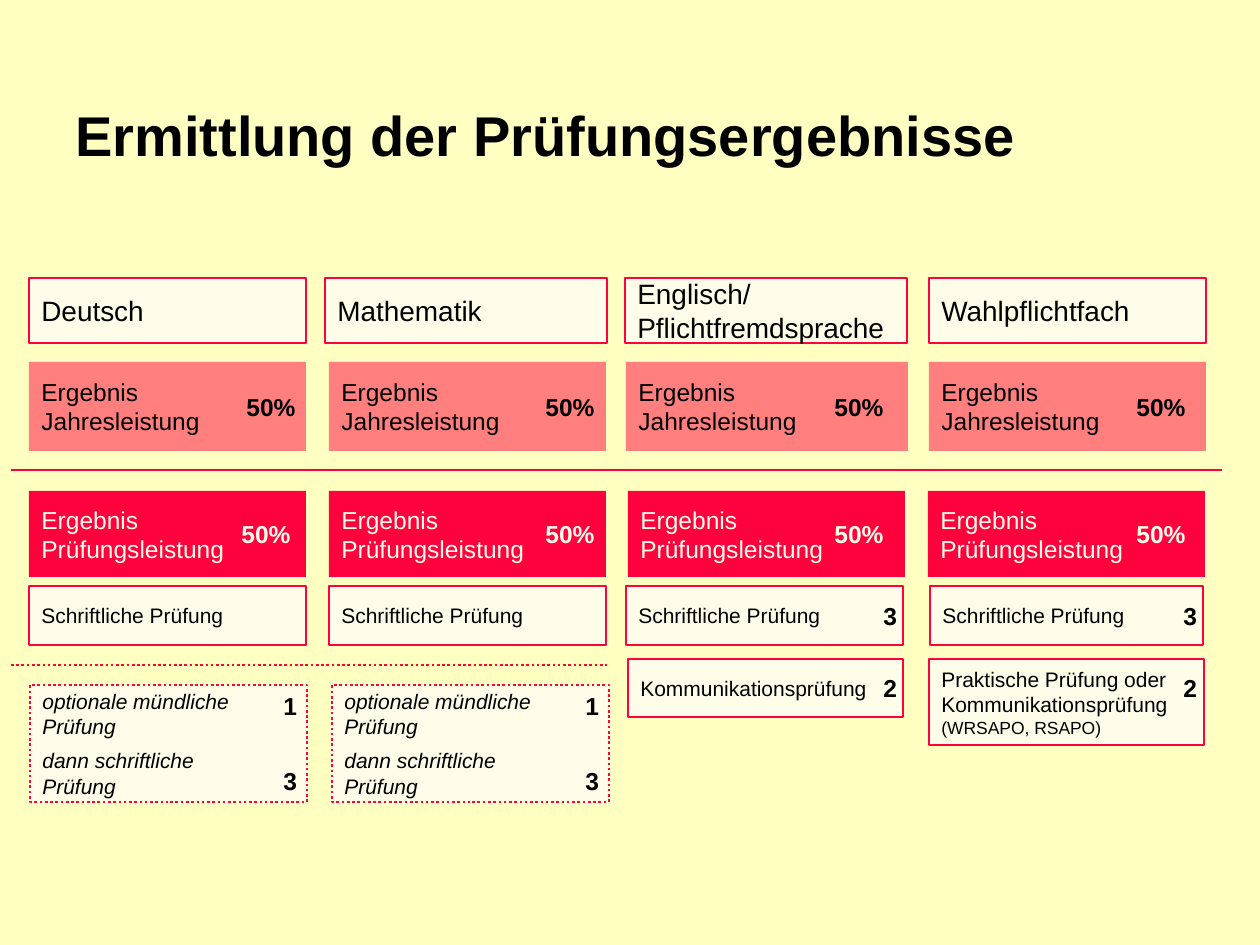
from lxml import etree
from pptx import Presentation
from pptx.dml.color import RGBColor
from pptx.enum.dml import MSO_LINE
from pptx.enum.shapes import MSO_CONNECTOR, MSO_SHAPE
from pptx.enum.text import MSO_ANCHOR, MSO_AUTO_SIZE, PP_ALIGN
from pptx.oxml.ns import qn
from pptx.util import Emu, Pt

RECT = MSO_SHAPE.RECTANGLE
LINE = MSO_CONNECTOR.STRAIGHT
DOTS = MSO_LINE.ROUND_DOT
MID, TOP = MSO_ANCHOR.MIDDLE, MSO_ANCHOR.TOP
GROW = MSO_AUTO_SIZE.SHAPE_TO_FIT_TEXT
LEFT = PP_ALIGN.LEFT
COLORS = {"page": "FFFFC1", "cream": "FFFDE9", "red": "FE023E",
          "rose": "FF7F7F", "black": "000000"}


def px(n):
    return Emu(round(n * 914400 / 126))


def color(name):
    return RGBColor.from_string(COLORS[name])


def write(frame, text, size=14, ink="black", bold=False, italic=False,
          anchor=MID, gap=0, note=None):
    frame.word_wrap = True
    frame.vertical_anchor = anchor
    for i, part in enumerate(text.split("\n")):
        para = frame.paragraphs[0] if i == 0 else frame.add_paragraph()
        para.text = part
        para.alignment = LEFT
        if i:
            para.space_before = Pt(gap)
        for stop in para._p.findall(qn("a:br")):
            etree.SubElement(stop, qn("a:rPr"), sz=str(size * 100))
        if note:
            para.add_run().text = note
        for run in para.runs:
            font = run.font
            font.name, font.size = "Arial", Pt(size)
            font.bold, font.italic = bold, italic
            font.color.rgb = color(ink)
        if note:
            para.runs[-1].font.size = Pt(size - 2)


class Deck:
    def __init__(self):
        self.file = Presentation()
        self.file.slide_width = px(1260)
        self.file.slide_height = px(945)
        self.slide = self.file.slides.add_slide(self.file.slide_layouts[6])
        fill = self.slide.background.fill
        fill.solid()
        fill.fore_color.rgb = color("page")

    def stroke(self, line, dash=None):
        line.color.rgb = color("red")
        line.width = Pt(1.5)
        if dash:
            line.dash_style = dash

    def box(self, x, y, w, h, text, fill="cream", edge=True, dash=None, **style):
        shape = self.slide.shapes.add_shape(RECT, px(x), px(y), px(w), px(h))
        shape.shadow.inherit = False
        shape.fill.solid()
        shape.fill.fore_color.rgb = color(fill)
        if edge:
            self.stroke(shape.line, dash)
        else:
            shape.line.fill.background()
        write(shape.text_frame, text, **style)

    def label(self, x, y, w, h, text, **style):
        frame = self.slide.shapes.add_textbox(px(x), px(y), px(w), px(h)).text_frame
        write(frame, text, bold=True, **style)
        return frame

    def mark(self, x, y, text, w=61, ink="black"):
        self.label(x, y, w, 43, text, ink=ink, anchor=TOP).auto_size = GROW

    def rule(self, x, end, y, dash=None):
        line = self.slide.shapes.add_connector(LINE, px(x), px(y), px(end), px(y))
        self.stroke(line.line, dash)
        etree.SubElement(line._element.spPr, qn("a:effectLst"))


def main():
    deck = Deck()
    deck.label(63, 79, 1134, 110, "Ermittlung der Prüfungsergebnisse", size=32)

    heads = [(29, 277, "Deutsch"), (325, 282, "Mathematik"),
             (625, 282, "Englisch/\nPflichtfremdsprache"),
             (929, 277, "Wahlpflichtfach")]
    for x, w, text in heads:
        deck.box(x, 278, w, 65, text, size=16)

    for x, w, spot in [(29, 277, 234), (329, 277, 533), (626, 282, 822), (929, 277, 1124)]:
        deck.box(x, 362, w, 89, "Ergebnis Jahresleistung", fill="rose", edge=False)
        deck.mark(spot, 386, "50%", w=106)

    deck.rule(11, 1222, 470)

    for x, spot in [(29, 229), (329, 533), (628, 822), (928, 1124)]:
        deck.box(x, 491, 277, 86, "Ergebnis Prüfungsleistung", fill="red",
                 edge=False, ink="cream")
        deck.mark(spot, 513, "50%", w=106, ink="cream")

    for x, w in [(29, 277), (329, 277), (626, 277), (930, 273)]:
        deck.box(x, 586, w, 59, "Schriftliche Prüfung", size=12)

    deck.rule(11, 607, 665, DOTS)

    for x in (30, 332):
        deck.box(x, 685, 277, 117,
                 "optionale mündliche Prüfung\ndann schriftliche \vPrüfung",
                 dash=DOTS, size=12, italic=True, gap=5)
        deck.mark(x + 241, 685, "1")
        deck.mark(x + 241, 760, "3")

    deck.box(628, 659, 275, 58, "Kommunikationsprüfung", size=12)
    deck.box(929, 659, 275, 86, "Praktische Prüfung oder \vKommunikationsprüfung ",
             size=12, note="(WRSAPO, RSAPO)")
    for x in (871, 1171):
        deck.mark(x, 595, "3")
        deck.mark(x, 667, "2")

    deck.file.save("out.pptx")


if __name__ == "__main__":
    main()
